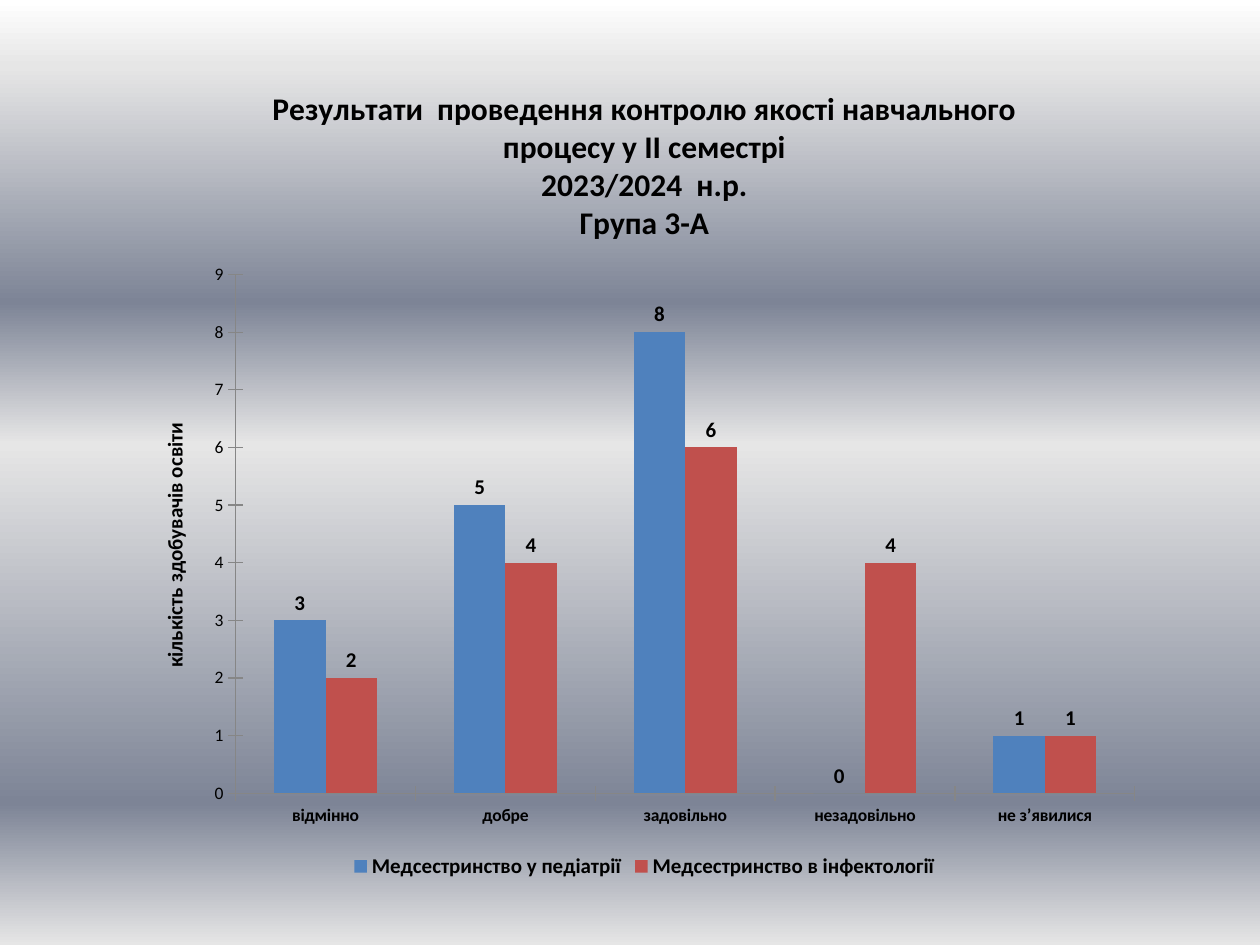
"""Build a slide with a clustered column chart of group 3-А control results."""
from dataclasses import dataclass

from lxml.etree import SubElement
from pptx import Presentation
from pptx.chart.data import CategoryChartData
from pptx.dml.color import RGBColor
from pptx.enum.chart import XL_CHART_TYPE, XL_LABEL_POSITION, XL_LEGEND_POSITION, XL_TICK_MARK
from pptx.enum.text import PP_ALIGN
from pptx.oxml.ns import qn
from pptx.util import Cm, Pt


@dataclass(frozen=True)
class Theme:
    font: str = "Calibri"
    text: str = "000000"
    axis: str = "868686"
    series: tuple = ("4F81BD", "C0504D")
    background: tuple = (
        (0, "FFFFFF"), (7, "E6E6E6"), (32, "7D8496"),
        (47, "E6E6E6"), (85, "7D8496"), (100, "E6E6E6"),
    )
    title_size: int = 18
    label_size: int = 12
    axis_size: int = 10


theme = Theme()


def write_text(paragraph, text, size=theme.label_size, bold=True, align=PP_ALIGN.CENTER):
    paragraph.alignment = align
    run = paragraph.add_run()
    run.text = text
    run.font.name = theme.font
    run.font.size = Pt(size)
    run.font.bold = bold
    run.font.color.rgb = RGBColor.from_string(theme.text)


presentation = Presentation()
presentation.slide_width = Cm(25.4)
presentation.slide_height = Cm(19.05)
slide = presentation.slides.add_slide(presentation.slide_layouts[6])

background_fill = slide.background.fill
background_fill.gradient()
background_fill.gradient_angle = 270
stop_list = slide.element.find(".//" + qn("a:gsLst"))
stop_list.clear()
for position, color in theme.background:
    stop = SubElement(stop_list, qn("a:gs"), pos=str(position * 1000))
    SubElement(stop, qn("a:srgbClr"), val=color)

chart_data = CategoryChartData(number_format="General")
chart_data.categories = ["відмінно", "добре", "задовільно", "незадовільно", "не з’явилися"]
chart_data.add_series("Медсестринство у педіатрії", (3, 5, 8, 0, 1))
chart_data.add_series("Медсестринство в інфектології", (2, 4, 6, 4, 1))
chart = slide.shapes.add_chart(
    XL_CHART_TYPE.COLUMN_CLUSTERED, Cm(2.69), Cm(1.22), Cm(20.6), Cm(16.6), chart_data
).chart
chart.font.name = theme.font
chart.font.size = Pt(theme.axis_size)
chart.font.color.rgb = RGBColor.from_string(theme.text)

title_lines = (
    ("Результати  проведення контролю якості навчального процесу у ІІ семестрі", PP_ALIGN.CENTER),
    ("2023/2024  н.р.", PP_ALIGN.LEFT),
    ("Група 3-А", PP_ALIGN.CENTER),
)
chart.has_title = True
chart.chart_title.include_in_layout = False
title_frame = chart.chart_title.text_frame
for index, (line, align) in enumerate(title_lines):
    paragraph = title_frame.add_paragraph() if index else title_frame.paragraphs[0]
    write_text(paragraph, line, size=theme.title_size, align=align)

plot = chart.plots[0]
plot.gap_width = 150
plot.overlap = 0
plot.vary_by_categories = False
for series, color in zip(plot.series, theme.series):
    series.format.fill.solid()
    series.format.fill.fore_color.rgb = RGBColor.from_string(color)
    series.invert_if_negative = False
    labels = series.data_labels
    labels.show_value = True
    labels.position = XL_LABEL_POSITION.OUTSIDE_END
    labels.font.name = theme.font
    labels.font.size = Pt(theme.label_size)
    labels.font.bold = True

for axis in (chart.category_axis, chart.value_axis):
    axis.has_major_gridlines = False
    axis.major_tick_mark = XL_TICK_MARK.CROSS
    axis.format.line.color.rgb = RGBColor.from_string(theme.axis)
    axis.tick_labels.font.name = theme.font
    axis.tick_labels.font.size = Pt(theme.axis_size)
chart.category_axis.tick_labels.font.bold = True
chart.value_axis.tick_labels.font.bold = False
chart.value_axis.minimum_scale = 0
chart.value_axis.maximum_scale = 9
chart.value_axis.major_unit = 1
axis_title_frame = chart.value_axis.axis_title.text_frame
write_text(axis_title_frame.paragraphs[0], "кількість здобувачів освіти")

chart.has_legend = True
chart.legend.position = XL_LEGEND_POSITION.BOTTOM
chart.legend.include_in_layout = False
chart.legend.font.name = theme.font
chart.legend.font.size = Pt(theme.label_size)
chart.legend.font.bold = True

plot_area = chart.element.find(".//" + qn("c:plotArea"))
plot_layout = plot_area.find(qn("c:layout"))
if plot_layout is None:
    plot_layout = plot_area.makeelement(qn("c:layout"))
    plot_area.insert(0, plot_layout)
manual_layout = SubElement(plot_layout, qn("c:manualLayout"))
layout_values = (
    ("layoutTarget", "inner"), ("xMode", "edge"), ("yMode", "edge"),
    ("x", "0.1"), ("y", "0.26"), ("w", "0.88"), ("h", "0.63"),
)
for name, value in layout_values:
    SubElement(manual_layout, qn("c:" + name), val=value)

presentation.save("out.pptx")
